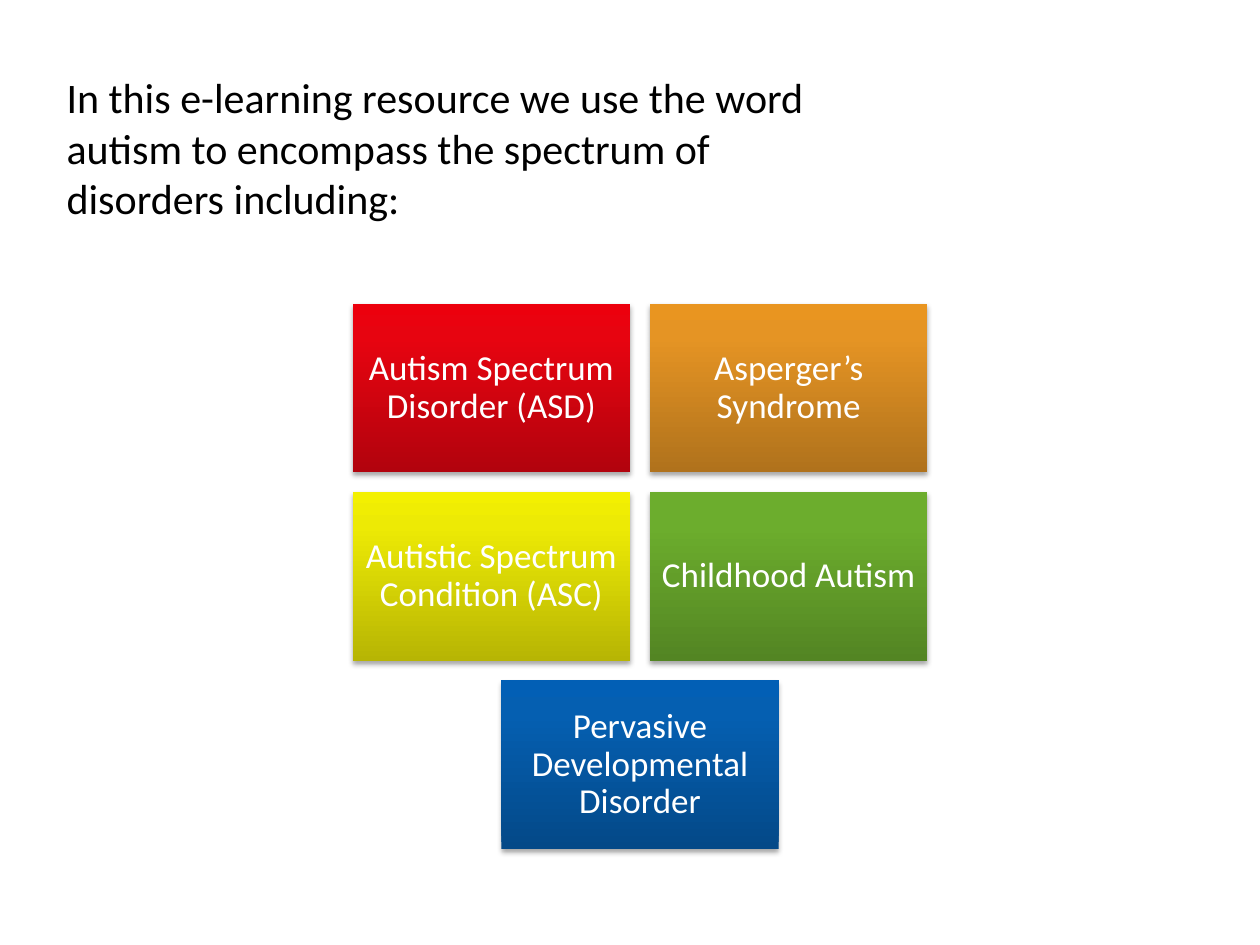
from pptx import Presentation
from pptx.dml.color import RGBColor
from pptx.enum.shapes import MSO_SHAPE
from pptx.enum.text import MSO_ANCHOR, PP_ALIGN
from pptx.oxml import parse_xml
from pptx.oxml.ns import nsdecls, qn
from pptx.util import Inches, Pt

INTRO = ("In this e-learning resource we use the word autism "
         "to encompass the spectrum of disorders including:")
TILE_WIDTH, TILE_HEIGHT = 2.2, 1.34
LEFT, TOP = 2.8, 2.41
COLUMN_STEP, ROW_STEP = 2.36, 1.495
TILES = [
    ("Autism Spectrum Disorder (ASD)", 0, 0, ("B2030D", "E70410", "EC000D")),
    ("Asperger’s Syndrome", 1, 0, ("B0721C", "E59424", "E99520")),
    ("Autistic Spectrum Condition (ASC)", 0, 1, ("B7B504", "EDEA05", "F3F001")),
    ("Childhood Autism", 1, 1, ("538523", "6CAD2D", "6DB02B")),
    ("Pervasive Developmental Disorder", 0.5, 2, ("044988", "055FB1", "025FB5")),
]


def color(value):
    """Turn a hex string into a colour."""
    return RGBColor.from_string(value)


def set_values(target, values):
    """Set each named value on the target."""
    for name, value in values.items():
        setattr(target, name, value)


def write_text(box, text, size, hex_color, frame_values, paragraph_values):
    """Write one formatted paragraph into a box."""
    frame = box.text_frame
    set_values(frame, {"word_wrap": True, **frame_values})
    paragraph = frame.paragraphs[0]
    set_values(paragraph, paragraph_values)
    span = paragraph.add_run()
    span.text = text
    set_values(span.font, {"name": "Calibri", "size": Pt(size)})
    span.font.color.rgb = color(hex_color)


def add_gradient(shape, shades):
    """Fill a shape with shades that rise from its bottom edge."""
    stops = "".join(
        f'<a:gs pos="{place * 1000}"><a:srgbClr val="{color(shade)}"/></a:gs>'
        for place, shade in zip((0, 80, 100), shades))
    gradient = parse_xml(
        f'<a:gradFill {nsdecls("a")} rotWithShape="1"><a:gsLst>{stops}</a:gsLst>'
        '<a:lin ang="16200000" scaled="0"/></a:gradFill>')
    shape.line.fill.background()
    shape.element.spPr.find(qn("a:ln")).addprevious(gradient)


def add_shadow(shape):
    """Give a shape a soft shadow below it."""
    shape.shadow.inherit = False
    shadow = parse_xml(
        f'<a:outerShdw {nsdecls("a")} blurRad="{Pt(3.1)}" dist="{Pt(1.8)}" '
        'dir="5400000" rotWithShape="0"><a:srgbClr val="000000">'
        '<a:alpha val="35000"/></a:srgbClr></a:outerShdw>')
    shape.element.spPr.find(qn("a:effectLst")).append(shadow)


def add_tile(page, text, column, row, shades):
    """Add one coloured tile to the grid."""
    tile = page.shapes.add_shape(
        MSO_SHAPE.RECTANGLE,
        Inches(LEFT + column * COLUMN_STEP), Inches(TOP + row * ROW_STEP),
        Inches(TILE_WIDTH), Inches(TILE_HEIGHT))
    add_gradient(tile, shades)
    add_shadow(tile)
    sides = ("left", "right", "top", "bottom")
    margins = {f"margin_{side}": Inches(0.08) for side in sides}
    write_text(tile, text, 20, "FFFFFF",
               {"vertical_anchor": MSO_ANCHOR.MIDDLE, **margins},
               {"alignment": PP_ALIGN.CENTER, "line_spacing": 0.9})


def add_intro(page):
    """Add the introductory sentence."""
    box = page.shapes.add_textbox(
        Inches(0.43), Inches(0.52), Inches(6.61), Inches(1.31))
    write_text(box, INTRO, 24, "000000", {}, {"alignment": PP_ALIGN.LEFT})


def main():
    """Build and save the deck."""
    deck = Presentation()
    set_values(deck, {"slide_width": Inches(10), "slide_height": Inches(7.5)})
    page = deck.slides.add_slide(deck.slide_layouts[6])
    add_intro(page)
    for tile in TILES:
        add_tile(page, *tile)
    deck.save("out.pptx")


if __name__ == "__main__":
    main()
